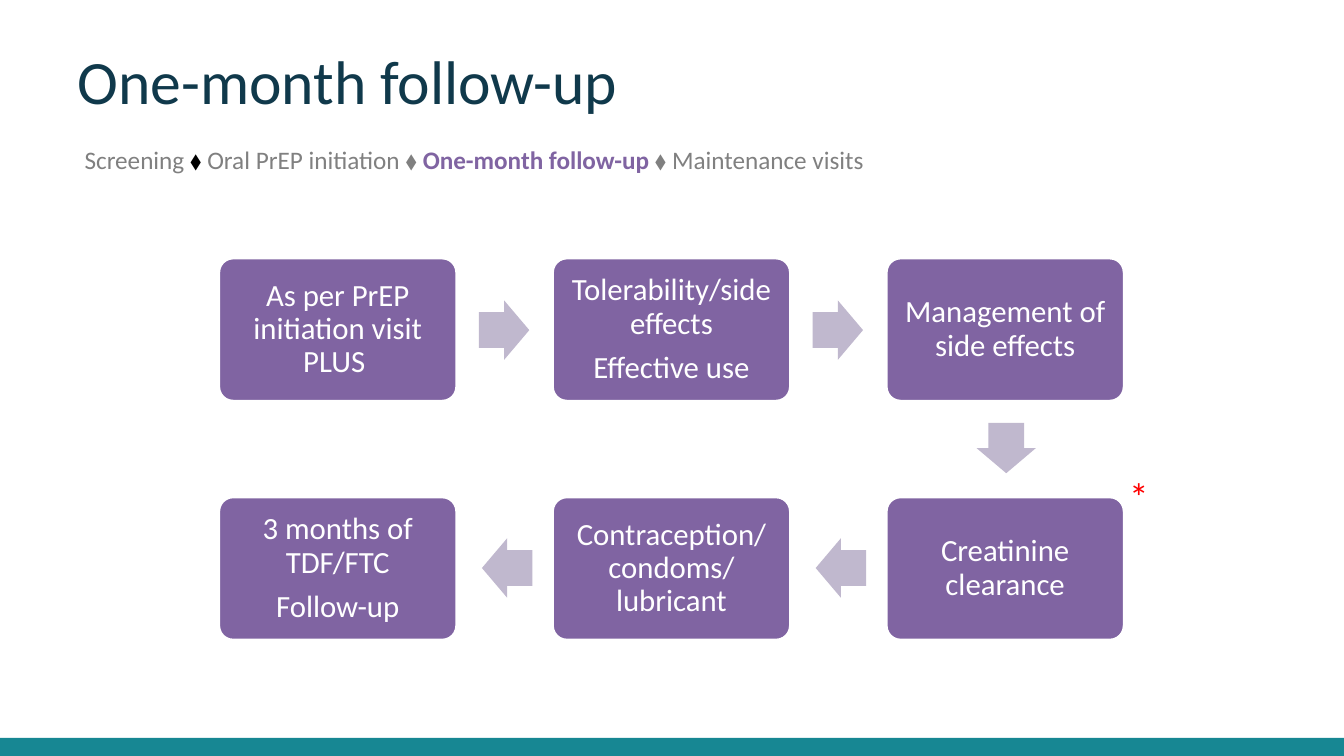
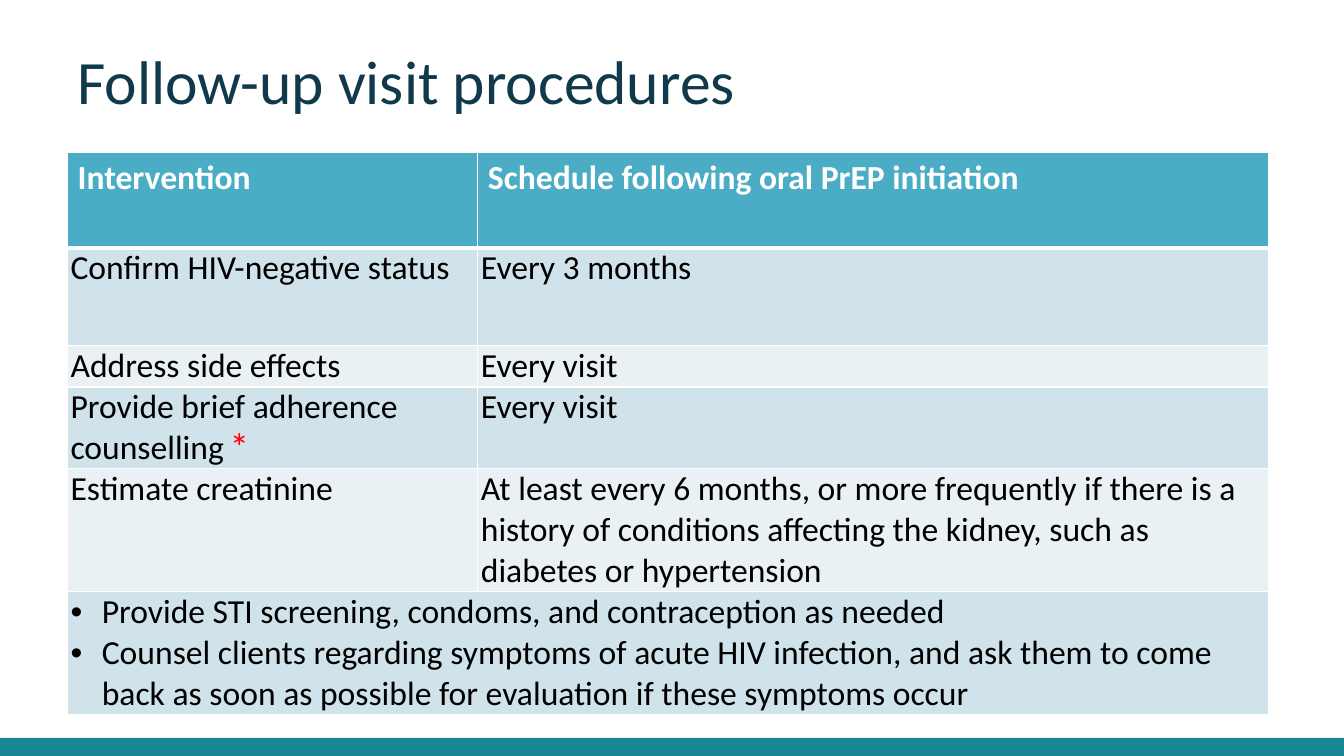
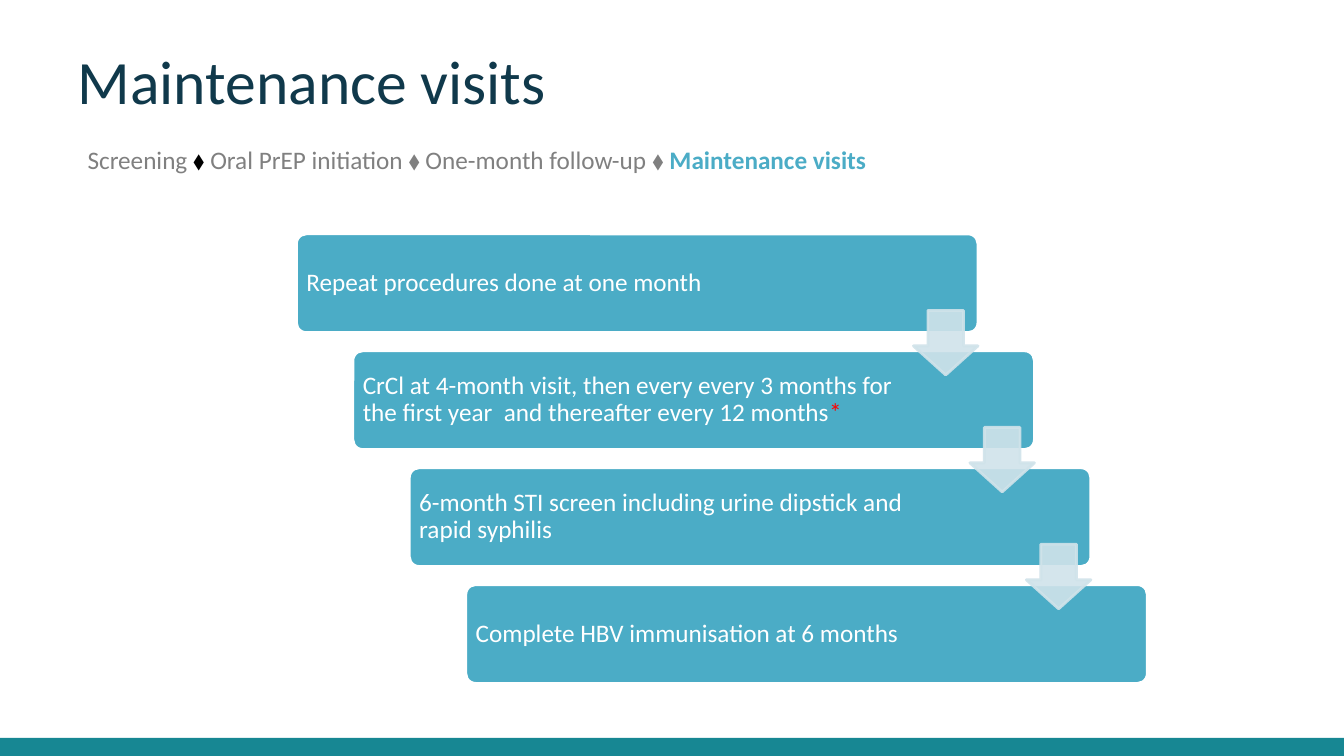
from lxml.etree import SubElement
from pptx import Presentation
from pptx.dml.color import RGBColor
from pptx.enum.shapes import MSO_SHAPE as Preset
from pptx.enum.text import MSO_ANCHOR as Anchor, PP_ALIGN as Align
from pptx.oxml.ns import qn
from pptx.util import Inches, Pt

WHITE = RGBColor(0xFF, 0xFF, 0xFF)
BLACK = RGBColor(0, 0, 0)
GREY = RGBColor(0x80, 0x80, 0x80)
RED = RGBColor(0xFF, 0, 0)
NAVY = RGBColor(0x10, 0x39, 0x4B)
TEAL = RGBColor(0x17, 0x87, 0x93)
PURPLE = RGBColor(0x80, 0x64, 0xA2)
LILAC = RGBColor(0xC0, 0xB8, 0xCE)
BLUE = RGBColor(0x4B, 0xAC, 0xC6)
PALE_BLUE = RGBColor(0xD0, 0xE3, 0xEA)
PALER_BLUE = RGBColor(0xE9, 0xF1, 0xF5)

MARGINS = ("margin_left", "margin_top", "margin_right", "margin_bottom")


def write(frame, paragraphs, size, color, frame_format={}, paragraph_format={}):
    """Fill a text frame; each paragraph is a list of (text, colour or None, bold) runs."""
    for name, value in {"word_wrap": True, **frame_format}.items():
        setattr(frame, name, value)
    for index, runs in enumerate(paragraphs):
        paragraph = frame.add_paragraph() if index else frame.paragraphs[0]
        for name, value in paragraph_format.items():
            setattr(paragraph, name, value)
        for text, run_color, bold in runs:
            run = paragraph.add_run()
            run.text = text
            font_format = {"name": "Calibri", "size": Pt(size), "bold": bold}
            for name, value in font_format.items():
                setattr(run.font, name, value)
            run.font.color.rgb = run_color or color


def draw(slide, preset, bounds, fill, line=None, adjustments=()):
    """Add a flat preset shape; bounds are left, top, width, height in inches."""
    shape = slide.shapes.add_shape(preset, *map(Inches, bounds))
    shape.shadow.inherit = False
    shape.fill.solid()
    shape.fill.fore_color.rgb = fill
    if line is None:
        shape.line.fill.background()
    else:
        shape.line.color.rgb = line
        shape.line.width = Pt(2)
    for index, value in enumerate(adjustments):
        shape.adjustments[index] = value
    return shape


prs = Presentation()
prs.slide_width, prs.slide_height = Inches(13.33), Inches(7.5)

# Shared band and title
slides = []
for title in ("One-month follow-up", "Follow-up visit procedures", "Maintenance visits"):
    slide = prs.slides.add_slide(prs.slide_layouts[6])
    draw(slide, Preset.RECTANGLE, (0, 7.32, 13.33, 0.18), TEAL)
    heading = slide.shapes.add_textbox(*map(Inches, (0.67, 0.49, 12, 1.06)))
    write(heading.text_frame, [[(title, None, False)]], 44, NAVY,
          paragraph_format={"line_spacing": Pt(44.8)})
    slides.append(slide)
month_slide, procedures_slide, maintenance_slide = slides

# Trail of stages, with the current one highlighted
STAGES = ("Screening", "Oral PrEP initiation", "One-month follow-up", "Maintenance visits")
for slide, left, current, highlight in ((month_slide, 0.74, 2, PURPLE),
                                        (maintenance_slide, 0.77, 3, BLUE)):
    trail = []
    for index, stage in enumerate(STAGES):
        if index:
            trail.append((" ⬧ ", BLACK if index == 1 else GREY, False))
        active = index == current
        trail.append((stage, highlight if active else GREY, active))
    box = slide.shapes.add_textbox(*map(Inches, (left, 1.38, 9.35, 0.71)))
    write(box.text_frame, [trail], 18, GREY)

# One-month follow-up: steps run right, down, then back left
STEP_WIDTH, STEP_HEIGHT = 2.36, 1.42
STEPS = (
    (0, 0, ["As per PrEP initiation visit PLUS "]),
    (1, 0, ["Tolerability/side effects", "Effective use"]),
    (2, 0, ["Management of side effects"]),
    (2, 1, ["Creatinine clearance"]),
    (1, 1, ["Contraception/ condoms/ lubricant"]),
    (0, 1, ["3 months of TDF/FTC", "Follow-up"]),
)
# Move to the next step: arrow offset from the box, and rotation
ARROWS = {(1, 0): (2.58, 0.42, 0), (0, 1): (0.94, 1.59, 90), (-1, 0): (-0.7, 0.41, 180)}
for index, (column, row, lines) in enumerate(STEPS):
    left, top = 2.17 + 3.31 * column, 2.56 + 2.37 * row
    step = draw(month_slide, Preset.ROUNDED_RECTANGLE,
                (left, top, STEP_WIDTH, STEP_HEIGHT), PURPLE, WHITE, [0.1])
    write(step.text_frame, [[(line, None, False)] for line in lines], 22, WHITE,
          {"vertical_anchor": Anchor.MIDDLE, **dict.fromkeys(MARGINS, Inches(0.09))},
          {"alignment": Align.CENTER, "line_spacing": 0.9, "space_after": Pt(7.7)})
    if index + 1 < len(STEPS):
        next_column, next_row, _ = STEPS[index + 1]
        across, down, rotation = ARROWS[next_column - column, next_row - row]
        arrow = draw(month_slide, Preset.RIGHT_ARROW,
                     (left + across, top + down, 0.5, 0.59), LILAC, None, [0.6, 0.5])
        arrow.rotation = rotation

# Follow-up visit procedures
ROWS = (
    (0.95, ["Intervention"], ["Schedule following oral PrEP initiation"]),
    (0.97, ["Confirm HIV-negative status"], ["Every 3 months"]),
    (0.41, ["Address side effects"], ["Every visit"]),
    (0.81, ["Provide brief adherence counselling"], ["Every visit"]),
    (1.22, ["Estimate creatinine"],
     ["At least every 6 months, or more frequently if there is a history of "
      "conditions affecting the kidney, such as diabetes or hypertension"]),
    (1.22, ["Provide STI screening, condoms, and contraception as needed",
            "Counsel clients regarding symptoms of acute HIV infection, and ask them "
            "to come back as soon as possible for evaluation if these symptoms occur"], []),
)
table = procedures_slide.shapes.add_table(
    len(ROWS), 2, *map(Inches, (0.67, 1.51, 11.91, 5.58))).table
for column, width in zip(table.columns, (4.07, 7.84)):
    column.width = Inches(width)
last_row = len(ROWS) - 1
table.cell(last_row, 0).merge(table.cell(last_row, 1))
for row, (height, *contents) in enumerate(ROWS):
    table.rows[row].height = Inches(height)
    header = row == 0
    for column, lines in enumerate(contents):
        cell = table.cell(row, column)
        properties = cell._tc.get_or_add_tcPr()
        for side in "LRTB":
            heavy = (header and side == "B") or (row == 1 and side == "T")
            border = SubElement(properties, qn(f"a:ln{side}"), w=str(Pt(3 if heavy else 1)))
            SubElement(SubElement(border, qn("a:solidFill")), qn("a:srgbClr"), val=str(WHITE))
        cell.fill.solid()
        cell.fill.fore_color.rgb = BLUE if header else PALE_BLUE if row % 2 else PALER_BLUE
        if not header:
            for name, inset in zip(MARGINS, (0.03, 0, 0.03, 0)):
                setattr(cell, name, Inches(inset))
        write(cell.text_frame, [[(line, None, header)] for line in lines],
              24, WHITE if header else BLACK)
for paragraph in table.cell(last_row, 0).text_frame.paragraphs:
    bullet = paragraph._p.get_or_add_pPr()
    bullet.set("marL", str(Inches(0.31)))
    bullet.set("indent", str(Inches(-0.31)))
    SubElement(bullet, qn("a:buFont"), typeface="Arial")
    SubElement(bullet, qn("a:buChar"), char="•")

# Maintenance visits: a staircase, with the arrows on top
VISITS = (
    [("Repeat procedures done at one month", None, False)],
    [("CrCl at 4-month visit, then every every 3 months for the first year  "
      "and thereafter every 12 months", None, False), ("*", RED, False)],
    [("6-month STI screen including urine dipstick and rapid syphilis", None, False)],
    [("Complete HBV immunisation at 6 months", None, False)],
)
ACROSS, DOWN = 0.56, 1.16
for index, runs in enumerate(VISITS):
    visit = draw(maintenance_slide, Preset.ROUNDED_RECTANGLE,
                 (2.94 + ACROSS * index, 2.32 + DOWN * index, 6.76, 0.98),
                 BLUE, WHITE, [0.1])
    write(visit.text_frame, [runs], 18, WHITE,
          {"vertical_anchor": Anchor.MIDDLE, **dict.fromkeys(MARGINS, Inches(0.07)),
           "margin_right": Inches(1.27)},
          {"alignment": Align.LEFT, "line_spacing": 0.9, "space_after": Pt(6.3)})
for index in range(len(VISITS) - 1):
    arrow = draw(maintenance_slide, Preset.DOWN_ARROW,
                 (9.06 + ACROSS * index, 3.08 + DOWN * index, 0.64, 0.64),
                 PALE_BLUE, PALE_BLUE, [0.55, 0.45])
    for color in arrow._element.spPr.iter(qn("a:srgbClr")):
        SubElement(color, qn("a:alpha"), val="90000")

# Red asterisks
for slide, left, top in ((month_slide, 11.1, 4.64), (procedures_slide, 2.18, 4.14)):
    asterisk = slide.shapes.add_textbox(*map(Inches, (left, top, 0.4, 0.57)))
    write(asterisk.text_frame, [[("*", None, False)]], 28, RED, {"word_wrap": False})

prs.save("out.pptx")
